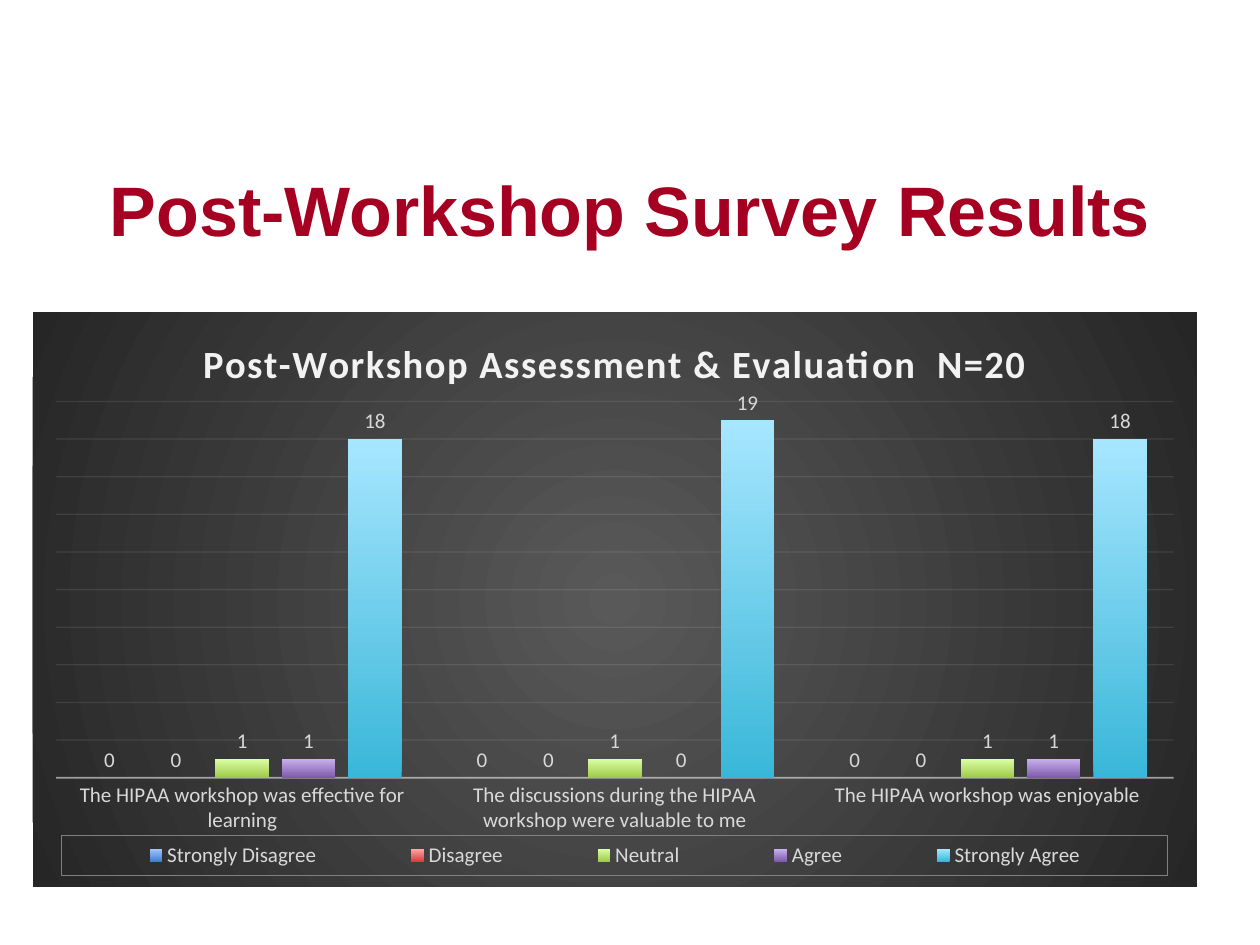
from dataclasses import dataclass

from lxml import etree
from pptx import Presentation
from pptx.chart.data import CategoryChartData
from pptx.dml.color import RGBColor
from pptx.enum.chart import XL_CHART_TYPE, XL_LABEL_POSITION, XL_LEGEND_POSITION, XL_TICK_MARK
from pptx.enum.text import MSO_ANCHOR, PP_ALIGN
from pptx.oxml import parse_xml
from pptx.oxml.ns import nsdecls, qn
from pptx.util import Inches, Pt

COLUMN = XL_CHART_TYPE.COLUMN_CLUSTERED
ABOVE = XL_LABEL_POSITION.OUTSIDE_END
BOTTOM = XL_LEGEND_POSITION.BOTTOM
NO_TICK = XL_TICK_MARK.NONE
CENTER = PP_ALIGN.CENTER
MIDDLE = MSO_ANCHOR.MIDDLE


@dataclass(frozen=True)
class Theme:
    head_font: str = "Arial"
    body_font: str = "Calibri"
    head: str = "A50021"
    label: str = "D9D9D9"
    light: str = "F2F2F2"
    frame: str = "808080"
    inner: str = "595959"
    outer: str = "262626"
    head_size: int = 40
    chart_size: int = 22
    label_size: int = 12


THEME = Theme()

GROUPS = [
    "The HIPAA workshop was effective for learning",
    "The discussions during the HIPAA workshop were valuable to me",
    "The HIPAA workshop was enjoyable",
]
# name, counts, bottom colour, top colour
ANSWERS = [
    ("Strongly Disagree", (0, 0, 0), "3F80CE", "A4C4FF"),
    ("Disagree", (0, 0, 0), "D1403C", "FFA6A5"),
    ("Neutral", (1, 1, 1), "A0CA4A", "DAFFA5"),
    ("Agree", (1, 0, 1), "7F5BAB", "C8B0ED"),
    ("Strongly Agree", (18, 19, 18), "39B7D8", "A7E6FF"),
]


def set_font(font, name, size, color, bold=False):
    font.name, font.size, font.bold = name, Pt(size), bold
    font.color.rgb = RGBColor.from_string(color)


def set_label(font):
    set_font(font, THEME.body_font, THEME.label_size, THEME.label)


def set_line(line, width, alpha):
    """Draw a light line with the given opacity in percent."""
    line.width = Pt(width)
    line.color.rgb = RGBColor.from_string(THEME.light)
    tint = line._get_or_add_ln().find(".//" + qn("a:srgbClr"))
    etree.SubElement(tint, qn("a:alpha")).set("val", str(alpha * 1000))


def layout(x, y, w, h, inner=False):
    """Return a fixed layout in fractions of the chart."""
    target = '<c:layoutTarget val="inner"/>' if inner else ""
    return parse_xml(
        f'<c:layout {nsdecls("c")}><c:manualLayout>{target}'
        '<c:xMode val="edge"/><c:yMode val="edge"/>'
        f'<c:x val="{x}"/><c:y val="{y}"/><c:w val="{w}"/><c:h val="{h}"/>'
        "</c:manualLayout></c:layout>"
    )


def add_back(chart):
    """Fill the chart area with a radial gradient."""
    back = parse_xml(
        f'<c:spPr {nsdecls("c", "a")}><a:gradFill><a:gsLst>'
        f'<a:gs pos="0"><a:srgbClr val="{THEME.inner}"/></a:gs>'
        f'<a:gs pos="100000"><a:srgbClr val="{THEME.outer}"/></a:gs>'
        '</a:gsLst><a:path path="circle">'
        '<a:fillToRect l="50000" t="50000" r="50000" b="50000"/>'
        "</a:path></a:gradFill><a:ln><a:noFill/></a:ln></c:spPr>"
    )
    chart._chartSpace.find(qn("c:chart")).addnext(back)


def add_head(slide, x, y, w, h):
    frame = slide.shapes.add_textbox(x, y, w, h).text_frame
    frame.word_wrap = True
    frame.vertical_anchor = MIDDLE
    para = frame.paragraphs[0]
    para.text = "Post-Workshop Survey Results"
    para.alignment = CENTER
    set_font(para.font, THEME.head_font, THEME.head_size, THEME.head, True)


def style_title(chart):
    chart.has_title = True
    para = chart.chart_title.text_frame.paragraphs[0]
    run = para.add_run()
    run.text = "Post-Workshop Assessment & Evaluation  N=20"
    set_font(run.font, THEME.body_font, THEME.chart_size, THEME.light, True)
    run._r.get_or_add_rPr().set("spc", "100")
    chart.chart_title.include_in_layout = False


def style_axes(chart):
    base = chart.category_axis
    base.major_tick_mark = base.minor_tick_mark = NO_TICK
    set_label(base.tick_labels.font)
    set_line(base.format.line, 1, 54)
    scale = chart.value_axis
    scale.minimum_scale, scale.maximum_scale, scale.major_unit = 0, 20, 2
    scale.visible = False
    set_line(scale.major_gridlines.format.line, 0.75, 10)


def style_bars(chart):
    plot = chart.plots[0]
    plot.gap_width, plot.overlap = 100, -24
    plot.vary_by_categories = False
    for bars, (_, _, low, high) in zip(plot.series, ANSWERS):
        bars.invert_if_negative = False
        fill = bars.format.fill
        fill.gradient()
        fill.gradient_angle = 90
        for stop, color in zip(fill.gradient_stops, (low, high)):
            stop.color.rgb = RGBColor.from_string(color)
        labels = bars.data_labels
        labels.show_value = True
        labels.position = ABOVE
        set_label(labels.font)


def style_legend(chart):
    chart.has_legend = True
    legend = chart.legend
    legend.position = BOTTOM
    legend.include_in_layout = False
    set_label(legend.font)
    root = legend._element
    for old in root.findall(qn("c:layout")):
        root.remove(old)
    root.find(qn("c:legendPos")).addnext(layout(0.025, 0.91, 0.95, 0.07))
    root.find(qn("c:overlay")).addnext(parse_xml(
        f'<c:spPr {nsdecls("c", "a")}><a:ln w="9525"><a:solidFill>'
        f'<a:srgbClr val="{THEME.frame}"/></a:solidFill></a:ln></c:spPr>'
    ))


def add_survey(slide, x, y, w, h):
    data = CategoryChartData()
    data.categories = GROUPS
    for name, counts, _, _ in ANSWERS:
        data.add_series(name, counts)
    chart = slide.shapes.add_chart(COLUMN, x, y, w, h, data).chart
    set_label(chart.font)
    add_back(chart)
    style_title(chart)
    style_axes(chart)
    style_bars(chart)
    style_legend(chart)
    area = chart._chartSpace.find(".//" + qn("c:plotArea"))
    for old in area.findall(qn("c:layout")):
        area.remove(old)
    area.insert(0, layout(0.02, 0.155, 0.96, 0.655, inner=True))


def main():
    deck = Presentation()
    deck.slide_width, deck.slide_height = Inches(10), Inches(7.5)
    slide = deck.slides.add_slide(deck.slide_layouts[6])
    add_head(slide, Inches(0.5), Inches(1.03), Inches(9), Inches(1.25))
    add_survey(slide, Inches(0.26), Inches(2.48), Inches(9.24), Inches(4.56))
    deck.save("out.pptx")


if __name__ == "__main__":
    main()
